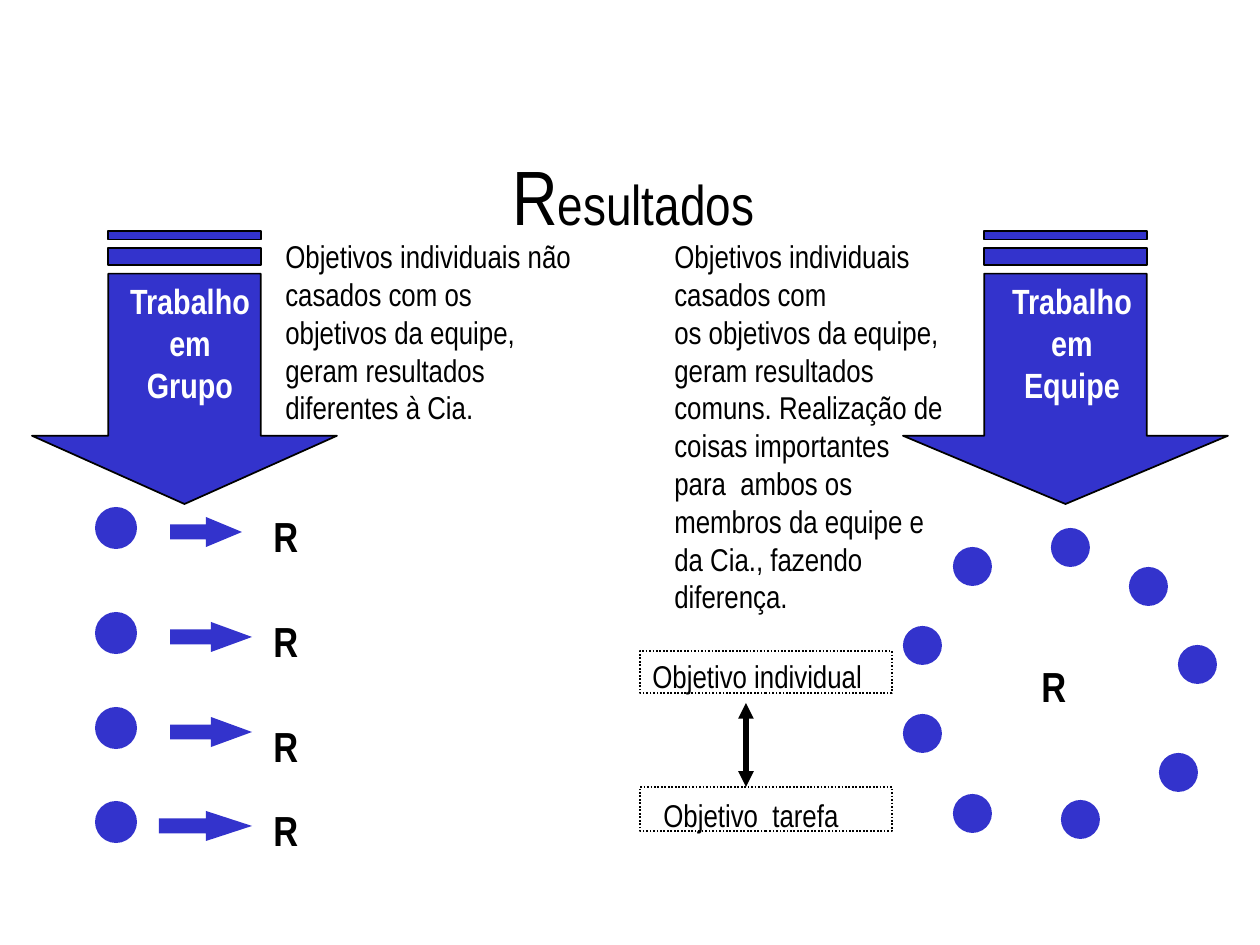
"""Builds the slide comparing results of group work and team work."""
from lxml.etree import SubElement
from pptx import Presentation
from pptx.dml.color import RGBColor
from pptx.enum.dml import MSO_LINE
from pptx.enum.shapes import MSO_CONNECTOR, MSO_SHAPE
from pptx.enum.text import MSO_ANCHOR, PP_ALIGN
from pptx.oxml.ns import qn
from pptx.util import Pt

PX = 914400 // 126
FONT = "Arial Narrow"
COLORS = {"blue": "3333CC", "black": "000000", "white": "FFFFFF"}

TITLE = [("R", 44), ("esultados", 32)]
BIG_ARROWS = [
    (32, 305, ["Trabalho", "em", "Grupo"]),
    (903, 325, ["Trabalho", "em", "Equipe"]),
]
ARROW_TOP, ARROW_HEIGHT = 231, 273
DESCRIPTIONS = [
    (273, 231, 315, 202, [
        "Objetivos individuais não casados com os objetivos da equipe, "
        "geram resultados diferentes à Cia.",
    ]),
    (662, 231, 305, 391, [
        "Objetivos individuais casados com",
        "os objetivos da equipe, geram resultados comuns. "
        "Realização de coisas importantes",
        "para  ambos os membros da equipe e da Cia., fazendo diferença.",
    ]),
]
GROUP_ROWS = [
    (507, 170, 72, 36, 504),
    (612, 170, 82, 41, 609),
    (707, 170, 82, 41, 714),
    (801, 159, 93, 46, 798),
]
TEAM_DOTS = [
    (1051, 528), (953, 547), (903, 626), (903, 714), (953, 794),
    (1061, 800), (1159, 753), (1178, 645), (1129, 567),
]
GOALS = [
    (651, 42, 640, 651, 284, "Objetivo individual"),
    (787, 44, 651, 790, 221, "Objetivo  tarefa"),
]

deck = Presentation()
deck.slide_width, deck.slide_height = 1260 * PX, 945 * PX
page = deck.slides.add_slide(deck.slide_layouts[6])


def color(name):
    return RGBColor.from_string(COLORS[name])


def add_shape(kind, left, top, width, height, fill=None, line=None):
    shape = page.shapes.add_shape(
        kind, *(round(value * PX) for value in (left, top, width, height)))
    shape.shadow.inherit = False
    if fill:
        shape.fill.solid()
        shape.fill.fore_color.rgb = color(fill)
    else:
        shape.fill.background()
    if line:
        shape.line.color.rgb = color(line)
        shape.line.width = Pt(1)
    else:
        shape.line.fill.background()
    return shape


def add_text(paragraphs, left, top, width, height, size=18, bold=False,
             ink="black", align=PP_ALIGN.LEFT, wrap=True,
             anchor=MSO_ANCHOR.TOP):
    box = page.shapes.add_textbox(left * PX, top * PX, width * PX, height * PX)
    frame = box.text_frame
    frame.word_wrap = wrap
    frame.vertical_anchor = anchor
    for index, content in enumerate(paragraphs):
        para = frame.add_paragraph() if index else frame.paragraphs[0]
        para.alignment = align
        spans = [(content, size)] if isinstance(content, str) else content
        for words, points in spans:
            span = para.add_run()
            span.text = words
            span.font.name = FONT
            span.font.size = Pt(points)
            span.font.bold = bold
            span.font.color.rgb = color(ink)


def add_result(left, top):
    add_text(["R"], left, top, 50, 63, size=24, bold=True, wrap=False)


def add_double_arrow(x, top, bottom):
    connector = page.shapes.add_connector(
        MSO_CONNECTOR.STRAIGHT, x * PX, top * PX, x * PX, bottom * PX)
    connector.line.color.rgb = color("black")
    connector.line.width = Pt(3)
    line = connector.line._get_or_add_ln()
    for end in ("a:headEnd", "a:tailEnd"):
        SubElement(line, qn(end), type="triangle")
    SubElement(connector._element.spPr, qn("a:effectLst"))


add_text([TITLE], 494, 168, 273, 53, align=PP_ALIGN.RIGHT, wrap=False,
         anchor=MSO_ANCHOR.MIDDLE)

for left, top, width, height, paragraphs in DESCRIPTIONS:
    add_text(paragraphs, left, top, width, height)

for left, span_width, label in BIG_ARROWS:
    center = left + span_width / 2
    middle = ARROW_TOP + ARROW_HEIGHT / 2
    arrow = add_shape(
        MSO_SHAPE.STRIPED_RIGHT_ARROW, center - ARROW_HEIGHT / 2,
        middle - span_width / 2, ARROW_HEIGHT, span_width, "blue", "black")
    arrow.rotation = 90
    arrow.adjustments[0], arrow.adjustments[1] = 0.5, 0.25
    add_text(label, round(center) - 67, 273, 146, 139, size=20, bold=True,
             ink="white", align=PP_ALIGN.CENTER, wrap=False)

for top, arrow_left, arrow_width, head, result_top in GROUP_ROWS:
    add_shape(MSO_SHAPE.OVAL, 95, top, 42, 42, "blue")
    arrow = add_shape(MSO_SHAPE.RIGHT_ARROW, arrow_left, top + 10,
                      arrow_width, 30, "blue")
    arrow.adjustments[0], arrow.adjustments[1] = 0.5, head / 30
    add_result(261, result_top)

for left, top in TEAM_DOTS:
    add_shape(MSO_SHAPE.OVAL, left, top, 39, 39, "blue")
add_result(1029, 654)

for top, height, text_left, text_top, text_width, label in GOALS:
    frame = add_shape(MSO_SHAPE.RECTANGLE, 640, top, 252, height, line="black")
    frame.line.dash_style = MSO_LINE.ROUND_DOT
    add_text([label], text_left, text_top, text_width, 50)
add_double_arrow(746, 703, 787)

deck.save("out.pptx")
